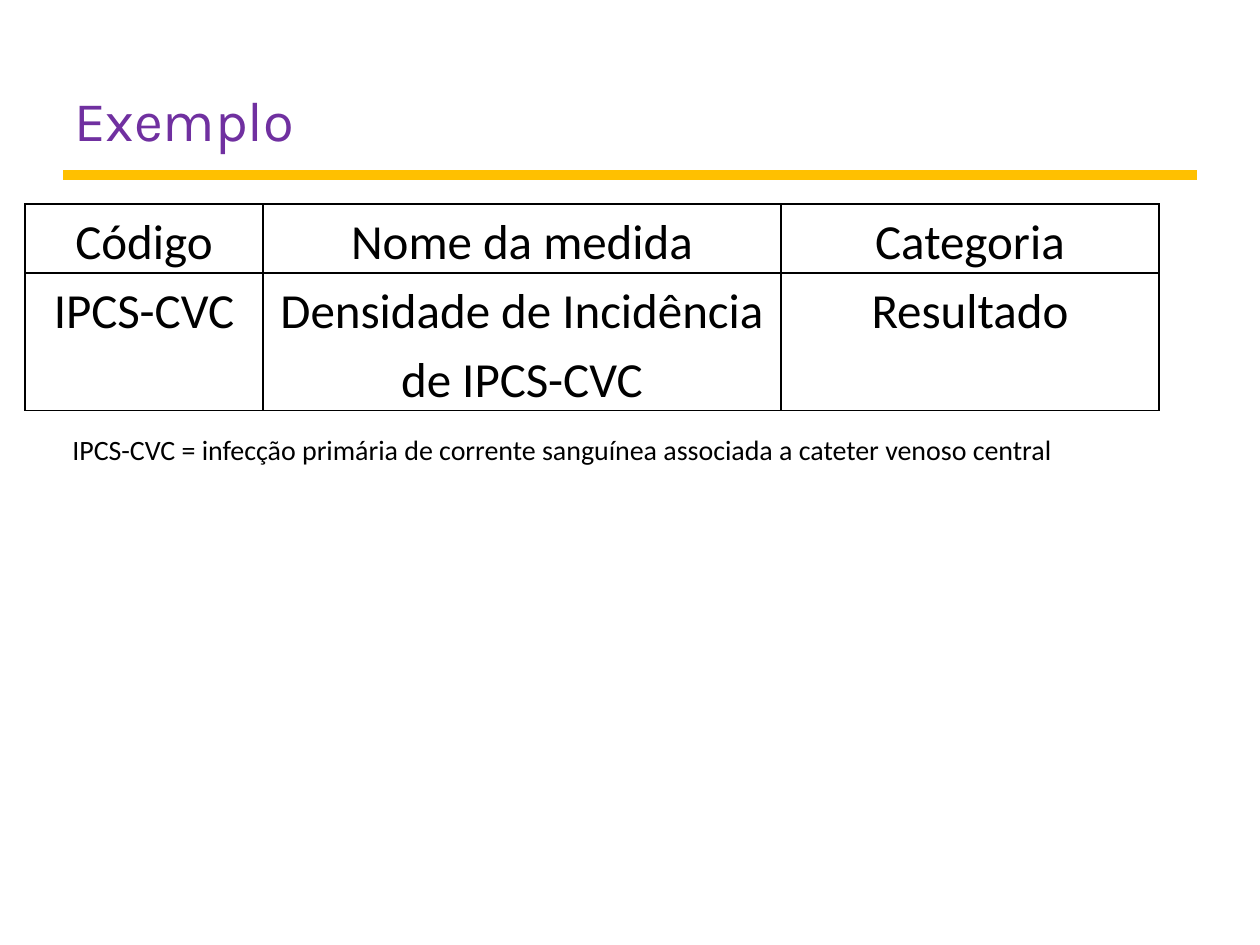
from dataclasses import dataclass

from lxml.etree import SubElement
from pptx import Presentation
from pptx.dml.color import RGBColor
from pptx.enum.shapes import MSO_CONNECTOR as Link
from pptx.enum.text import MSO_ANCHOR as Anchor, MSO_AUTO_SIZE as Fit, PP_ALIGN as Align
from pptx.oxml import parse_xml
from pptx.oxml.ns import nsdecls, qn
from pptx.util import Emu, Pt

SCALE = 914400 / 126
BLACK = "000000"


@dataclass
class Box:
    x: int
    y: int
    w: int
    h: int


@dataclass
class Style:
    face: str
    size: int
    color: str


HEAD = Style("Karla", 32, "7030A0")
BODY = Style("Calibri", 28, BLACK)
NOTE = Style("Calibri", 16, BLACK)

COLS = [238, 518, 378]
ROWS = [68, 136]
CELLS = [
    ["Código", "Nome da medida", "Categoria"],
    ["IPCS-CVC", "Densidade de Incidência de IPCS-CVC", "Resultado"],
]


def px(n: int) -> Emu:
    return Emu(round(n * SCALE))


def rgb(code: str) -> RGBColor:
    return RGBColor.from_string(code)


def place(box: Box) -> tuple:
    return px(box.x), px(box.y), px(box.w), px(box.h)


def write(para, text: str, style: Style) -> None:
    para.text = text
    font = para.font
    font.name, font.size = style.face, Pt(style.size)
    font.color.rgb = rgb(style.color)


def title(slide, text: str, box: Box) -> None:
    shape = slide.shapes.title
    shape.left, shape.top, shape.width, shape.height = place(box)
    frame = shape.text_frame
    frame.vertical_anchor = Anchor.BOTTOM
    frame.margin_left = frame.margin_right = px(11)
    frame.margin_top = frame.margin_bottom = px(5)
    para = frame.paragraphs[0]
    para.alignment = Align.LEFT
    write(para, text, HEAD)


def rule(slide, x: int, y: int, w: int, color: str) -> None:
    line = slide.shapes.add_connector(Link.STRAIGHT, px(x), px(y), px(x + w), px(y))
    line.line.color.rgb = rgb(color)
    line.line.width = Pt(6)
    SubElement(line.element.spPr, qn("a:effectLst"))


def border(cell, color: str) -> None:
    props = cell._tc.get_or_add_tcPr()
    for i, side in enumerate("LRTB"):
        props.insert(i, parse_xml(
            f'<a:ln{side} {nsdecls("a")} w="{Pt(1)}"><a:solidFill>'
            f'<a:srgbClr val="{color}"/></a:solidFill></a:ln{side}>'))


def fill(cell, text: str, anchor: Anchor) -> None:
    cell.fill.background()
    border(cell, BLACK)
    cell.vertical_anchor = anchor
    cell.margin_left = cell.margin_right = px(6)
    cell.margin_top = cell.margin_bottom = 0
    para = cell.text_frame.paragraphs[0]
    para.alignment = Align.CENTER
    para.line_spacing = 1.15
    write(para, text, BODY)


def table(slide, x: int, y: int) -> None:
    box = Box(x, y, sum(COLS), sum(ROWS))
    grid = slide.shapes.add_table(len(ROWS), len(COLS), *place(box)).table
    grid.first_row = grid.horz_banding = False
    for col, w in zip(grid.columns, COLS):
        col.width = px(w)
    for row, h, texts, anchor in zip(grid.rows, ROWS, CELLS, (Anchor.MIDDLE, Anchor.TOP)):
        row.height = px(h)
        for cell, text in zip(row.cells, texts):
            fill(cell, text, anchor)


def note(slide, text: str, box: Box) -> None:
    frame = slide.shapes.add_textbox(*place(box)).text_frame
    frame.word_wrap = True
    frame.auto_size = Fit.SHAPE_TO_FIT_TEXT
    write(frame.paragraphs[0], text, NOTE)


def main() -> None:
    deck = Presentation()
    deck.slide_width, deck.slide_height = px(1260), px(945)
    slide = deck.slides.add_slide(deck.slide_layouts[5])
    rule(slide, 63, 175, 1134, "FFC000")
    title(slide, "Exemplo", Box(63, 32, 1134, 126))
    table(slide, 25, 204)
    note(slide, "IPCS-CVC = infecção primária de corrente sanguínea "
         "associada a cateter venoso central", Box(60, 426, 1032, 47))
    deck.save("out.pptx")


if __name__ == "__main__":
    main()
